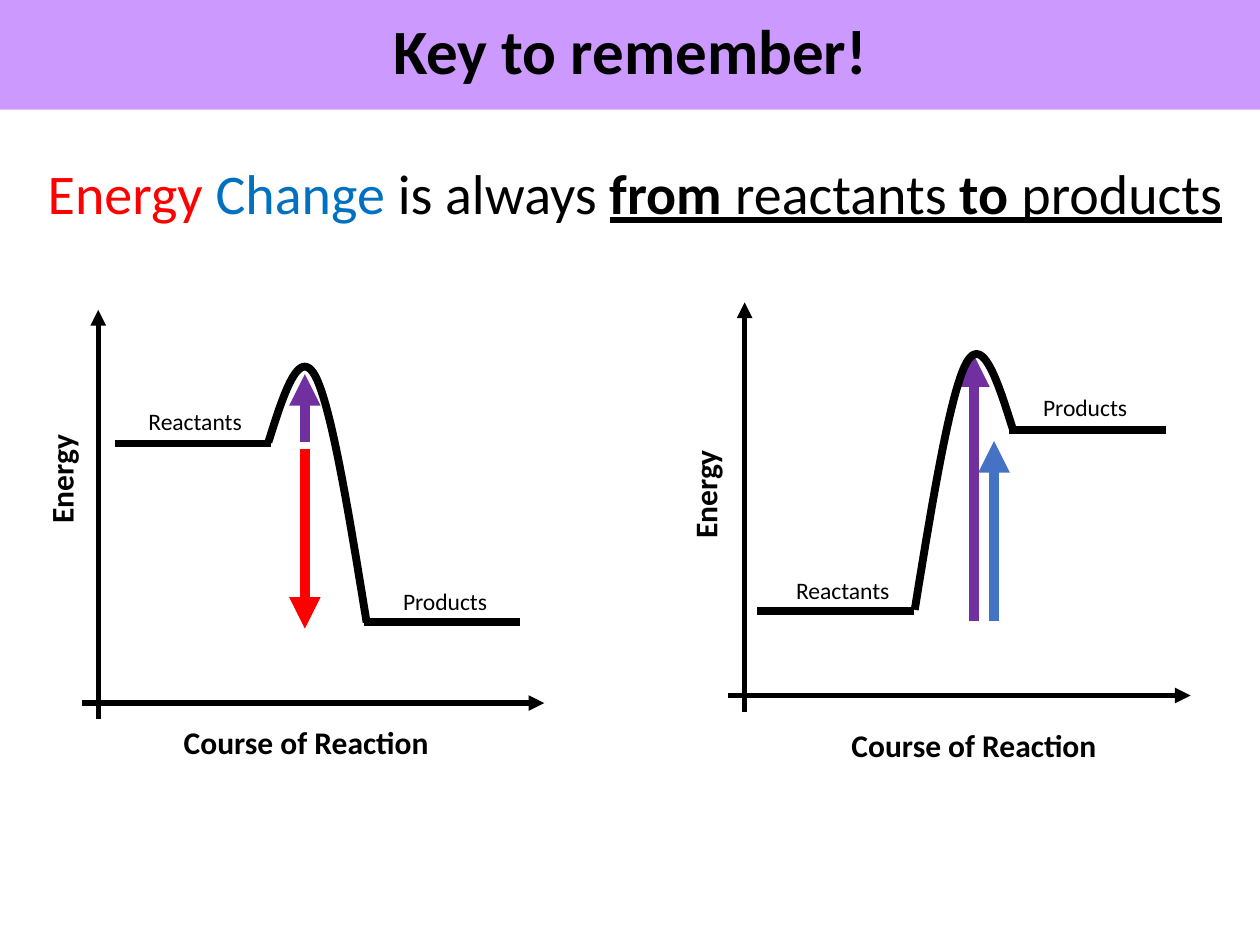
from dataclasses import dataclass
from lxml import etree
from pptx import Presentation
from pptx.dml.color import RGBColor
from pptx.enum.shapes import MSO_CONNECTOR
from pptx.enum.text import MSO_ANCHOR, MSO_AUTO_SIZE, PP_ALIGN
from pptx.oxml.ns import qn
from pptx.util import Inches, Pt

STRAIGHT = MSO_CONNECTOR.STRAIGHT
MIDDLE, CENTER = MSO_ANCHOR.MIDDLE, PP_ALIGN.CENTER
FIT_TEXT = MSO_AUTO_SIZE.SHAPE_TO_FIT_TEXT


@dataclass(frozen=True)
class Theme:
    font: str = "Calibri"
    ink: str = "000000"
    banner: str = "CC99FF"
    release: str = "FF0000"
    change: str = "0070C0"
    absorb: str = "4472C4"
    activation: str = "7030A0"
    title_size: float = 36
    statement_size: float = 32
    axis_size: float = 18
    level_size: float = 13.5
    axis_line: float = 3
    level_line: float = 4.5
    arrow_line: float = 6


THEME = Theme()

# Content: runs are (text, colour, bold, underlined)
TITLE = "Key to remember!"
STATEMENT = [
    ("Energy ", THEME.release, False, False),
    ("Change ", THEME.change, False, False),
    ("is always ", THEME.ink, False, False),
    ("from", THEME.ink, True, True),
    (" reactants ", THEME.ink, False, True),
    ("to", THEME.ink, True, True),
    (" products", THEME.ink, False, True),
]

# Each diagram: axis origin, energy levels, reaction hump, arrows, axis titles.
# Levels are (name, line start, label box); arrows are (x, tail y, head y, colour).
DIAGRAMS = [
    {
        "origin": (0.78, 5.58),
        "levels": [("Reactants", (0.91, 3.52), (1.08, 3.18, 0.96, 0.33)),
                   ("Products", (2.89, 4.94), (3.1, 4.61, 0.88, 0.33))],
        "hump": (2.13, 3.51, 1),
        "arrows": [(2.42, 3.56, 4.99, THEME.release),
                   (2.42, 3.51, 2.97, THEME.activation)],
        "energy": (0.03, 3.6, 0.91, 0.4),
        "course": (1.36, 5.69, 2.16, 0.4),
    },
    {
        "origin": (5.91, 5.52),
        "levels": [("Products", (8.01, 3.41), (8.18, 3.07, 0.88, 0.33)),
                   ("Reactants", (6.01, 4.85), (6.22, 4.52, 0.96, 0.33))],
        "hump": (8.04, 3.41, -1),
        "arrows": [(7.89, 4.93, 3.5, THEME.absorb),
                   (7.73, 4.93, 2.82, THEME.activation)],
        "energy": (5.14, 3.72, 0.91, 0.4),
        "course": (6.66, 5.71, 2.16, 0.4),
    },
]
AXIS_UP, AXIS_RIGHT, AXIS_OVERHANG = 3.12, 3.54, 0.13
LEVEL_LENGTH = 1.24
# Two cubic curves from the higher level over the peak to the lower level
HUMP = [
    ((0, 0), (0.12, -0.38), (0.24, -0.76), (0.37, -0.53)),
    ((0.37, -0.53), (0.5, -0.29), (0.64, 0.57), (0.78, 1.43)),
]
CURVE_STEPS = 24


def style_font(font, size, color=None, bold=False):
    font.name, font.size, font.bold = THEME.font, Pt(size), bold
    if color:
        font.color.rgb = RGBColor.from_string(color)


def place(shape, box):
    shape.left, shape.top, shape.width, shape.height = map(Inches, box)


def add_line(slide, start, end, color, width, arrow=False):
    line = slide.shapes.add_connector(STRAIGHT, *map(Inches, (*start, *end)))
    line.line.color.rgb = RGBColor.from_string(color)
    line.line.width = Pt(width)
    if arrow:
        etree.SubElement(line.line._get_or_add_ln(), qn("a:tailEnd"), type="triangle")
    etree.SubElement(line._element.spPr, qn("a:effectLst"))


def add_text(slide, box, runs, size, bold=False, rotation=0):
    shape = slide.shapes.add_textbox(*map(Inches, box))
    shape.rotation = rotation
    frame = shape.text_frame
    frame.word_wrap = False
    frame.auto_size = FIT_TEXT
    paragraph = frame.paragraphs[0]
    style_font(paragraph.font, size, bold=bold)
    for text, color, run_bold, underlined in runs:
        run = paragraph.add_run()
        run.text = text
        style_font(run.font, size, color, bold or run_bold)
        run.font.underline = underlined


def add_label(slide, box, text, size, bold=False, rotation=0):
    add_text(slide, box, [(text, THEME.ink, bold, False)], size, bold, rotation)


def cubic(points, t):
    weights = ((1 - t) ** 3, 3 * t * (1 - t) ** 2, 3 * t ** 2 * (1 - t), t ** 3)
    return tuple(sum(w * p[axis] for w, p in zip(weights, points)) for axis in (0, 1))


def add_hump(slide, x, y, direction):
    offsets = [cubic(curve, step / CURVE_STEPS)
               for curve in HUMP for step in range(1, CURVE_STEPS + 1)]
    vertices = [(Inches(x + direction * dx), Inches(y + dy)) for dx, dy in offsets]
    builder = slide.shapes.build_freeform(Inches(x), Inches(y))
    builder.add_line_segments(vertices, close=False)
    hump = builder.convert_to_shape()
    hump.shadow.inherit = False
    hump.fill.background()
    hump.line.color.rgb = RGBColor.from_string(THEME.ink)
    hump.line.width = Pt(THEME.level_line)


def add_diagram(slide, diagram):
    # Axes
    x, y = diagram["origin"]
    add_line(slide, (x, y + AXIS_OVERHANG), (x, y - AXIS_UP),
             THEME.ink, THEME.axis_line, arrow=True)
    add_line(slide, (x - AXIS_OVERHANG, y), (x + AXIS_RIGHT, y),
             THEME.ink, THEME.axis_line, arrow=True)
    add_label(slide, diagram["energy"], "Energy", THEME.axis_size, True, 270)
    add_label(slide, diagram["course"], "Course of Reaction", THEME.axis_size, True)

    # Energy levels
    for name, (left, top), box in diagram["levels"]:
        add_line(slide, (left, top), (left + LEVEL_LENGTH, top),
                 THEME.ink, THEME.level_line)
        add_label(slide, box, name, THEME.level_size)

    # Energy arrows, with the reaction curve in front
    for arrow_x, tail, head, color in diagram["arrows"]:
        add_line(slide, (arrow_x, tail), (arrow_x, head),
                 color, THEME.arrow_line, arrow=True)
    add_hump(slide, *diagram["hump"])


def main():
    presentation = Presentation()
    presentation.slide_width, presentation.slide_height = Inches(10), Inches(7.5)
    slide = presentation.slides.add_slide(presentation.slide_layouts[5])

    # Title banner
    title = slide.shapes.title
    place(title, (0, -0.01, 10, 0.88))
    title.fill.solid()
    title.fill.fore_color.rgb = RGBColor.from_string(THEME.banner)
    title.text_frame.text = TITLE
    title.text_frame.vertical_anchor = MIDDLE
    paragraph = title.text_frame.paragraphs[0]
    paragraph.alignment, paragraph.line_spacing = CENTER, 0.9
    style_font(paragraph.font, THEME.title_size, THEME.ink, True)

    # Diagrams and statement
    for diagram in DIAGRAMS:
        add_diagram(slide, diagram)
    add_text(slide, (0.28, 1.21, 9.62, 0.64), STATEMENT, THEME.statement_size)

    presentation.save("out.pptx")


if __name__ == "__main__":
    main()
